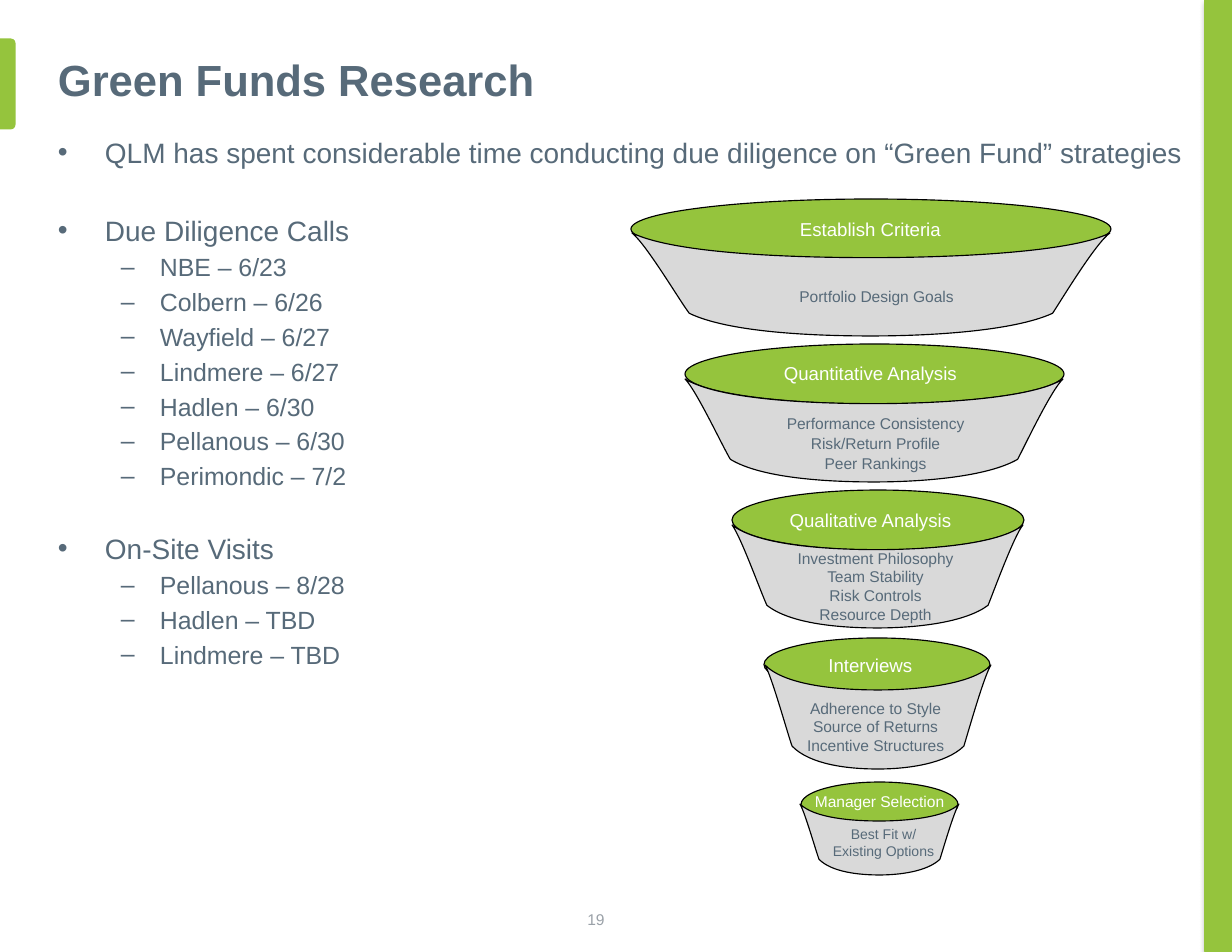
"""Build the Green Funds Research slide with its five-stage selection funnel."""
from lxml.etree import SubElement
from pptx import Presentation
from pptx.dml.color import RGBColor
from pptx.enum.shapes import MSO_SHAPE as SHAPE
from pptx.enum.text import MSO_ANCHOR as ANCHOR, MSO_AUTO_SIZE as AUTO, PP_ALIGN as ALIGN
from pptx.oxml.ns import qn
from pptx.util import Pt

EMU_PER_PX = 914400 / 112
GREEN, SLATE, GREY, BLACK, WHITE = "95C43D", "576A79", "D9D9D9", "000000", "FFFFFF"
PAGE_GREY = "9AA1A8"

TITLE = "Green Funds Research"
OUTLINE = [
    ("QLM has spent considerable time conducting due diligence on “Green Fund” strategies", []),
    ("Due Diligence Calls", [
        "NBE – 6/23", "Colbern – 6/26", "Wayfield – 6/27", "Lindmere – 6/27",
        "Hadlen – 6/30", "Pellanous – 6/30", "Perimondic – 7/2"]),
    ("On-Site Visits", ["Pellanous – 8/28", "Hadlen – TBD", "Lindmere – TBD"]),
]
GROUP_GAPS = (0, 28.7, 26)
ITEM_GAP = 3.2
LEVELS = [
    {"size": 18, "margin": 47, "indent": -47},
    {"size": 16, "margin": 102, "indent": -39},
]

STAGES = [
    {"name": "Establish Criteria", "size": 12, "label": (760, 212, 221, 34),
     "lid": (631, 199, 480, 60), "cup": (632, 233, 478, 103),
     "details": ["Portfolio Design Goals"],
     "detail_size": 10, "gap": 0, "box": (760, 281, 233, 30)},
    {"name": "Quantitative Analysis", "size": 12, "label": (760, 356, 221, 34),
     "lid": (685, 344, 379, 60), "cup": (685, 379, 378, 103),
     "details": ["Performance Consistency", "Risk/Return Profile", "Peer Rankings"],
     "detail_size": 10, "gap": 0.8, "box": (765, 407, 221, 72)},
    {"name": "Qualitative Analysis", "size": 12, "label": (760, 503, 221, 34),
     "lid": (732, 490, 292, 60), "cup": (732, 525, 291, 103),
     "details": ["Investment Philosophy", "Team Stability", "Risk Controls", "Resource Depth"],
     "detail_size": 10, "gap": 0, "box": (765, 543, 221, 86)},
    {"name": "Interviews", "size": 12, "label": (760, 648, 221, 34),
     "lid": (764, 638, 226, 53), "cup": (765, 665, 226, 104),
     "details": ["Adherence to Style", "Source of Returns", "Incentive Structures"],
     "detail_size": 10, "gap": 0, "box": (765, 693, 221, 67)},
    {"name": "Manager Selection", "size": 10, "label": (769, 786, 221, 30),
     "lid": (801, 782, 157, 45), "cup": (800, 804, 159, 71),
     "details": ["Best Fit w/", "Existing Options"],
     "detail_size": 9, "gap": 0, "box": (773, 820, 221, 45)},
]
CUP_START = (1, 0)
CUP_CURVES = [
    ((0.97, 0.1), (0.9, 0.64), (0.88, 0.78)),
    ((0.8, 0.95), (0.63, 1), (0.5, 1)),
    ((0.37, 1), (0.2, 0.96), (0.12, 0.78)),
    ((0.1, 0.66), (0.03, 0.11), (0, 0)),
    ((0.09, 0.2), (0.33, 0.24), (0.5, 0.24)),
    ((0.67, 0.24), (0.92, 0.19), (1, 0)),
]


def px(length):
    return round(length * EMU_PER_PX)


def color(hex_value):
    return RGBColor.from_string(hex_value)


def place(shape, frame):
    shape.left, shape.top, shape.width, shape.height = map(px, frame)


def paint(shape, fill, line=None):
    shape.shadow.inherit = False
    shape.fill.solid()
    shape.fill.fore_color.rgb = color(fill)
    if line:
        shape.line.color.rgb = color(line)
        shape.line.width = Pt(0.75)
    else:
        shape.line.fill.background()


def add_preset(slide, kind, frame, fill, line=None):
    shape = slide.shapes.add_shape(kind, *map(px, frame))
    paint(shape, fill, line)
    return shape


def add_shadow(shape):
    effects = shape._element.spPr.find(qn("a:effectLst"))
    shadow = SubElement(effects, qn("a:outerShdw"), blurRad=str(Pt(3.1)), dist=str(Pt(1.8)),
                        dir="5400000", rotWithShape="0")
    black = SubElement(shadow, qn("a:srgbClr"), val=BLACK)
    SubElement(black, qn("a:alpha"), val="35000")


def write(paragraph, text, size, hex_value, bold=False):
    run = paragraph.add_run()
    run.text = text
    font = run.font
    font.name, font.size, font.bold = "Arial", Pt(size), bold
    font.color.rgb = color(hex_value)


def set_frame(frame, anchor):
    frame.word_wrap = True
    frame.auto_size = AUTO.NONE
    frame.vertical_anchor = anchor
    frame.margin_left = frame.margin_right = px(12)
    frame.margin_top = frame.margin_bottom = px(6)


def next_paragraph(frame, index):
    return frame.add_paragraph() if index else frame.paragraphs[0]


def add_centred_text(slide, box, lines, size, hex_value, gap=0):
    frame = slide.shapes.add_textbox(*map(px, box)).text_frame
    set_frame(frame, ANCHOR.MIDDLE)
    for index, line in enumerate(lines):
        paragraph = next_paragraph(frame, index)
        paragraph.alignment = ALIGN.CENTER
        if index:
            paragraph.space_before = Pt(gap)
        write(paragraph, line, size, hex_value)


def add_cup(slide, frame):
    left, top, width, height = map(px, frame)
    builder = slide.shapes.build_freeform(left, top)
    builder.add_line_segments([(left + width, top), (left + width, top + height), (left, top + height)])
    cup = builder.convert_to_shape()
    outline = next(cup._element.iter(qn("a:path")))
    for segment in list(outline):
        outline.remove(segment)
    for tag, points in [("a:moveTo", [CUP_START])] + [("a:cubicBezTo", curve) for curve in CUP_CURVES]:
        segment = SubElement(outline, qn(tag))
        for x, y in points:
            SubElement(segment, qn("a:pt"), x=str(round(x * width)), y=str(round(y * height)))
    SubElement(outline, qn("a:close"))
    paint(cup, GREY, BLACK)


def add_stage(slide, stage):
    add_preset(slide, SHAPE.OVAL, stage["lid"], GREEN, BLACK)
    add_cup(slide, stage["cup"])
    add_centred_text(slide, stage["box"], stage["details"], stage["detail_size"], SLATE, stage["gap"])
    add_centred_text(slide, stage["label"], [stage["name"]], stage["size"], WHITE)


def fill_outline(body):
    place(body, (46, 129, 1168, 730))
    frame = body.text_frame
    set_frame(frame, ANCHOR.TOP)
    rows = []
    for gap, (heading, items) in zip(GROUP_GAPS, OUTLINE):
        rows.append((0, heading, gap))
        rows += [(1, item, ITEM_GAP) for item in items]
    for index, (level, text, gap) in enumerate(rows):
        paragraph = next_paragraph(frame, index)
        style = LEVELS[level]
        paragraph.level = level
        paragraph.space_before = Pt(gap)
        properties = paragraph._p.get_or_add_pPr()
        properties.set("marL", str(px(style["margin"])))
        properties.set("indent", str(px(style["indent"])))
        write(paragraph, text, style["size"], SLATE)


def main():
    presentation = Presentation()
    presentation.slide_width, presentation.slide_height = px(1232), px(952)
    slide = presentation.slides.add_slide(presentation.slide_layouts[1])
    title, body = slide.placeholders

    add_shadow(add_preset(slide, SHAPE.RECTANGLE, (1205, 0, 26, 952), GREEN, GREEN))
    tab = add_preset(slide, SHAPE.ROUND_2_SAME_RECTANGLE, (-38, 76, 91, 16), GREEN)
    tab.adjustments[0] = 0.3
    tab.rotation = 90

    place(title, (46, 39, 1142, 81))
    set_frame(title.text_frame, ANCHOR.MIDDLE)
    heading = title.text_frame.paragraphs[0]
    heading.alignment = ALIGN.LEFT
    write(heading, TITLE, 28, SLATE, bold=True)
    fill_outline(body)

    for stage in STAGES:
        add_stage(slide, stage)
    add_centred_text(slide, (317, 903, 558, 32), ["19"], 10, PAGE_GREY)
    presentation.save("out.pptx")


if __name__ == "__main__":
    main()
